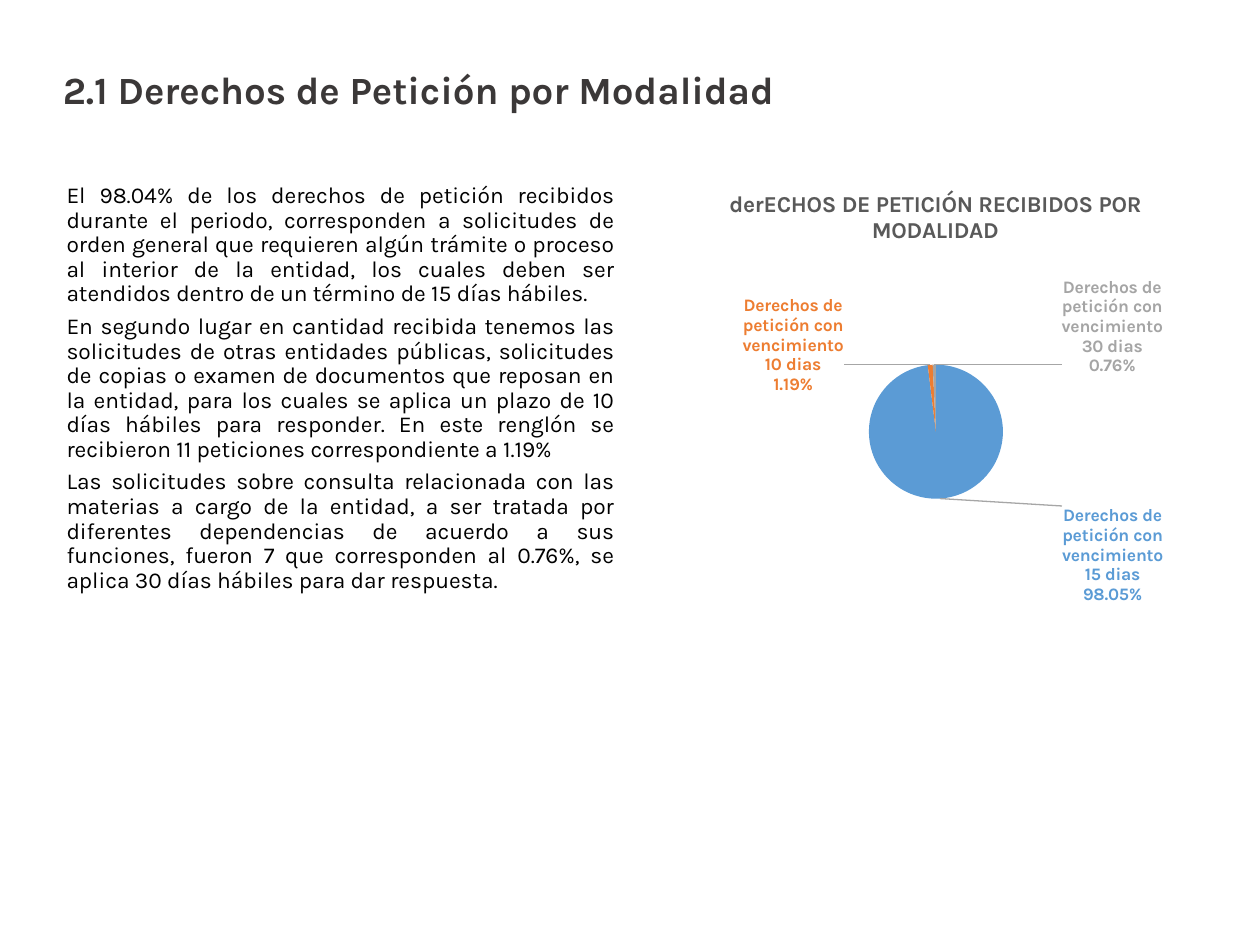
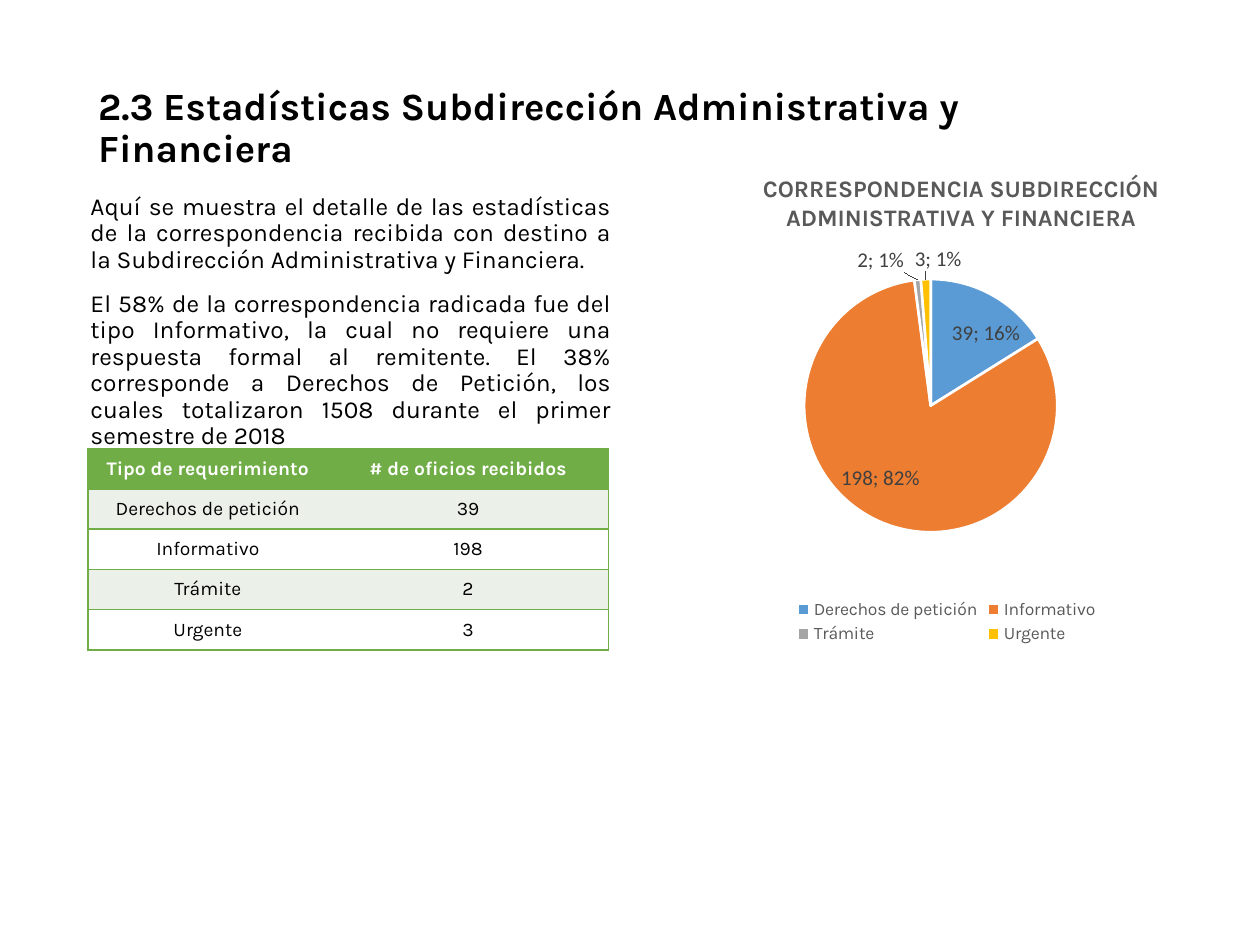
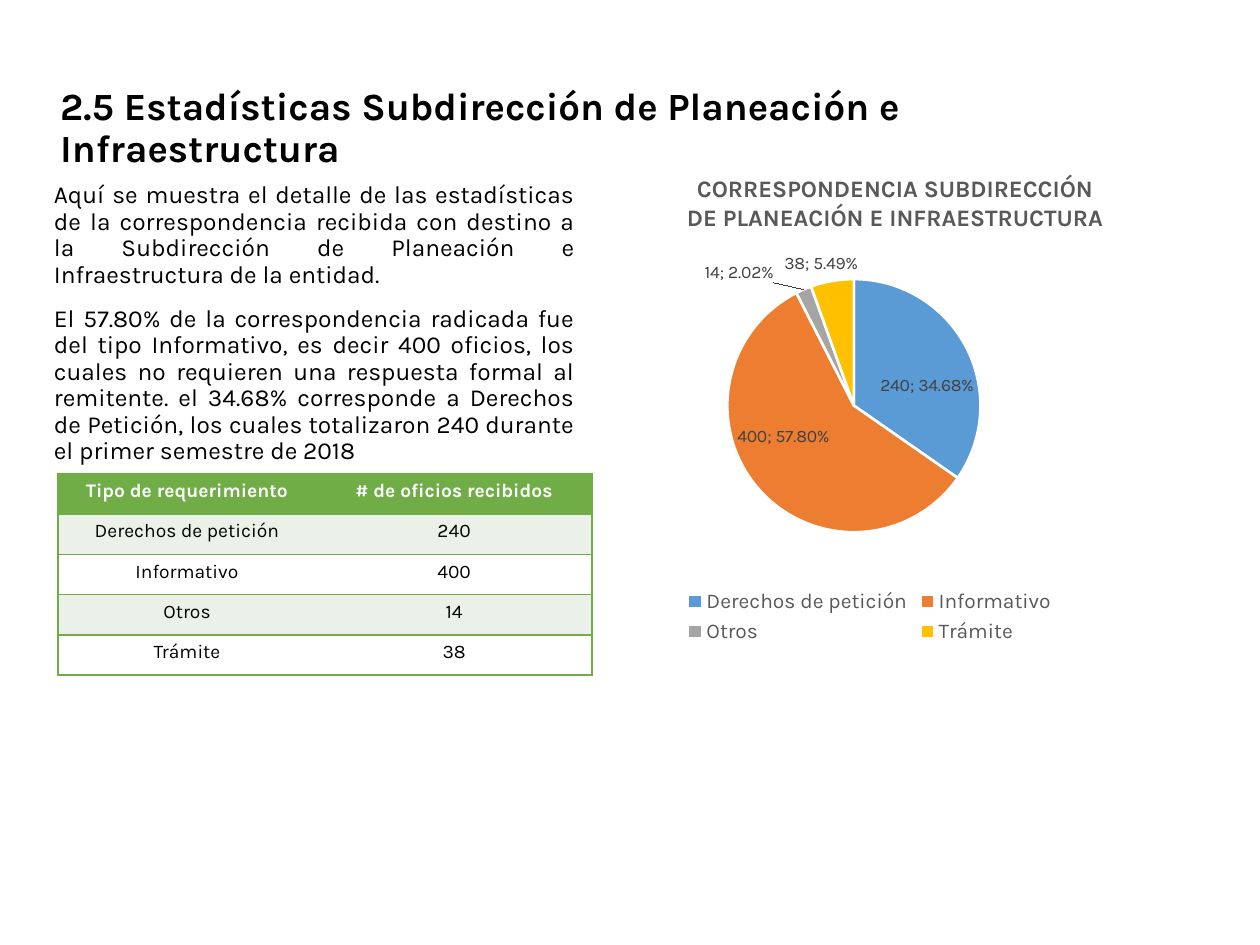
from lxml import etree
from pptx import Presentation
from pptx.chart.data import CategoryChartData
from pptx.dml.color import RGBColor
from pptx.enum.chart import XL_CHART_TYPE, XL_LABEL_POSITION, XL_LEGEND_POSITION
from pptx.enum.text import MSO_ANCHOR, PP_ALIGN
from pptx.oxml import parse_xml
from pptx.oxml.ns import nsdecls, qn
from pptx.util import Inches, Pt

PIE = XL_CHART_TYPE.PIE
OUTSIDE = XL_LABEL_POSITION.OUTSIDE_END
BOTTOM = XL_LEGEND_POSITION.BOTTOM
TOP, MIDDLE = MSO_ANCHOR.TOP, MSO_ANCHOR.MIDDLE
CENTER, JUSTIFY = PP_ALIGN.CENTER, PP_ALIGN.JUSTIFY

BLACK = RGBColor(0x00, 0x00, 0x00)
WHITE = RGBColor(0xFF, 0xFF, 0xFF)
CHARCOAL = RGBColor(0x3B, 0x38, 0x38)
DARK_GRAY = RGBColor(0x40, 0x40, 0x40)
MID_GRAY = RGBColor(0x59, 0x59, 0x59)
GREEN = RGBColor(0x70, 0xAD, 0x47)
PALE_GREEN = RGBColor(0xEB, 0xF1, 0xE9)
SLICES = [RGBColor(0x5B, 0x9B, 0xD5), RGBColor(0xED, 0x7D, 0x31),
          RGBColor(0xA5, 0xA5, 0xA5), RGBColor(0xFF, 0xC0, 0x00)]
FONT, ALT_FONT = "Karla", "Calibri"

TABLE_HEADER = ("Tipo de requerimiento", "# de oficios recibidos")
ROW_HEIGHT = 0.32
TITLE_POS = (0.15, 0.05)
WIDE_PLOT = (0.07, 0.27, 0.8, 0.5)

SLIDES = [
    dict(
        title="2.1 Derechos de Petición por Modalidad",
        title_box=(0.4, 0.35, 8.74, 0.76), title_color=CHARCOAL,
        body=[
            "El 98.04% de los derechos de petición recibidos durante el periodo, corresponden a "
            "solicitudes de orden general que requieren algún trámite o proceso al interior de la "
            "entidad, los cuales deben ser atendidos dentro de un término de 15 días hábiles.",
            "En segundo lugar en cantidad recibida tenemos las solicitudes de otras entidades "
            "públicas, solicitudes de copias o examen de documentos que reposan en la entidad, para "
            "los cuales se aplica un plazo de 10 días hábiles para responder. En este renglón se "
            "recibieron 11 peticiones correspondiente a 1.19%",
            "Las solicitudes sobre consulta relacionada con las materias a cargo de la entidad, a ser "
            "tratada por diferentes dependencias de acuerdo a sus funciones, fueron 7 que "
            "corresponden al 0.76%, se aplica 30 días hábiles para dar respuesta.",
        ],
        body_box=(0.43, 1.41, 4.54, 3.47), body_size=13, gap=4.5,
        chart_title="derECHOS DE PETICIÓN RECIBIDOS POR MODALIDAD", chart_title_size=13,
        chart_box=(5.05, 1.28, 4.71, 3.67), plot=(0.39, 0.44, 0.23, 0.29),
        data=[("Derechos de petición con vencimiento 15 dias", 98.05),
              ("Derechos de petición con vencimiento 10 dias", 1.19),
              ("Derechos de petición con vencimiento 30 dias", 0.76)],
        percent="0.00%", label_size=10, label_font=FONT,
        label_shifts=[(0.29, 0), (-0.23, 0.08), (0.3, 0.04)],
    ),
    dict(
        title="2.3 Estadísticas Subdirección Administrativa y Financiera",
        title_box=(0.68, 0.67, 8.62, 0.71), title_color=BLACK,
        body=[
            "Aquí se muestra el detalle de las estadísticas de la correspondencia recibida con "
            "destino a la Subdirección Administrativa y Financiera.",
            "El 58% de la correspondencia radicada fue del tipo Informativo, la cual no requiere una "
            "respuesta formal al remitente. El 38% corresponde a Derechos de Petición, los cuales "
            "totalizaron 1508 durante el primer semestre de 2018",
        ],
        body_box=(0.62, 1.49, 4.33, 4.1), body_size=14, gap=10,
        chart_title="CORRESPONDENCIA SUBDIRECCIÓN ADMINISTRATIVA Y FINANCIERA",
        chart_title_size=13.5,
        chart_box=(5.38, 1.13, 4.27, 4.02), plot=WIDE_PLOT,
        data=[("Derechos de petición", 39), ("Informativo", 198), ("Trámite", 2), ("Urgente", 3)],
        percent="0%", label_size=12, label_font=ALT_FONT, legend_size=10,
        table_pos=(0.7, 3.56), columns=(1.9, 2.23), anchor=MIDDLE,
    ),
    dict(
        title="2.5 Estadísticas Subdirección de Planeación e Infraestructura",
        title_box=(0.38, 0.67, 8.93, 0.71), title_color=BLACK,
        body=[
            "Aquí se muestra el detalle de las estadísticas de la correspondencia recibida con "
            "destino a la Subdirección de Planeación e Infraestructura de la entidad.",
            "El 57.80% de la correspondencia radicada fue del tipo Informativo, es decir 400 oficios, "
            "los cuales no requieren una respuesta formal al remitente. el 34.68% corresponde a "
            "Derechos de Petición, los cuales totalizaron 240 durante el primer semestre de 2018",
        ],
        body_box=(0.33, 1.4, 4.33, 4.32), body_size=14, gap=10,
        chart_title="CORRESPONDENCIA SUBDIRECCIÓN DE PLANEACIÓN E INFRAESTRUCTURA",
        chart_title_size=13.5,
        chart_box=(4.78, 1.13, 4.25, 4.02), plot=WIDE_PLOT,
        data=[("Derechos de petición", 240), ("Informativo", 400), ("Otros", 14), ("Trámite", 38)],
        percent="0.00%", label_size=10, label_font=FONT, legend_size=12,
        table_pos=(0.46, 3.76), columns=(2.05, 2.19), anchor=TOP,
    ),
]


def set_font(font, size, color, bold=False, name=FONT):
    font.name, font.size, font.bold = name, Pt(size), bold
    font.color.rgb = color


def add_text(slide, box, paragraphs, size, color, bold=False, gap=0, align=None, anchor=TOP):
    tf = slide.shapes.add_textbox(*map(Inches, box)).text_frame
    tf.word_wrap = True
    tf.vertical_anchor = anchor
    for i, text in enumerate(paragraphs):
        p = tf.paragraphs[0] if i == 0 else tf.add_paragraph()
        p.text = text
        p.line_spacing = 0.9
        p.alignment = align
        if i:
            p.space_before = Pt(gap)
        set_font(p.font, size, color, bold)


def manual_layout(x, y, w=None, h=None):
    """Return a c:layout; with w and h it places the inner plot area."""
    parts = []
    if w:
        parts.append('<c:layoutTarget val="inner"/>')
        parts.append('<c:xMode val="edge"/><c:yMode val="edge"/>')
    parts.append(f'<c:x val="{x}"/><c:y val="{y}"/>')
    if w:
        parts.append(f'<c:w val="{w}"/><c:h val="{h}"/>')
    return parse_xml(f'<c:layout {nsdecls("c")}><c:manualLayout>{"".join(parts)}'
                     "</c:manualLayout></c:layout>")


def place_title(title):
    layout = manual_layout(*TITLE_POS)
    for tag in ("c:yMode", "c:xMode"):
        mode = etree.Element(qn(tag), val="edge")
        layout[0].insert(0, mode)
    el = title._element
    for old in el.findall(qn("c:layout")):
        el.remove(old)
    el.find(qn("c:tx")).addnext(layout)


def add_separator(labels, text):
    sep = etree.Element(qn("c:separator"))
    sep.text = text
    labels.find(qn("c:showBubbleSize")).addnext(sep)


def spread_labels(series, spec_slide):
    """Move each label off its slice, in the colour of the slice."""
    for i, color in enumerate(SLICES[:len(spec_slide["data"])]):
        label = series.points[i].data_label
        set_font(label.font, spec_slide["label_size"], color, True)
        label.position = OUTSIDE
    dlbls = series.data_labels._element
    for dlbl, shift in zip(dlbls.findall(qn("c:dLbl")), spec_slide["label_shifts"]):
        for tag, val in (("showVal", "0"), ("showCatName", "1"), ("showPercent", "1")):
            dlbl.find(qn("c:" + tag)).set("val", val)
        fmt = etree.Element(qn("c:numFmt"), formatCode=spec_slide["percent"], sourceLinked="0")
        idx = dlbl.find(qn("c:idx"))
        idx.addnext(fmt)
        idx.addnext(manual_layout(*shift))
        add_separator(dlbl, "\n")
    dlbls.find(qn("c:showLeaderLines")).addnext(parse_xml(
        f'<c:leaderLines {nsdecls("c", "a")}><c:spPr><a:ln w="9525"><a:solidFill>'
        '<a:srgbClr val="A6A6A6"/></a:solidFill></a:ln></c:spPr></c:leaderLines>'))


def add_pie(slide, s):
    spread = "label_shifts" in s
    data = CategoryChartData()
    data.categories = [name for name, _ in s["data"]]
    data.add_series("Series 1", [value for _, value in s["data"]])
    chart = slide.shapes.add_chart(PIE, *map(Inches, s["chart_box"]), data).chart
    set_font(chart.font, 10, BLACK, name=ALT_FONT)

    chart.has_title = True
    p = chart.chart_title.text_frame.paragraphs[0]
    p.text = s["chart_title"]
    set_font(p.font, s["chart_title_size"], MID_GRAY, True)
    place_title(chart.chart_title)

    chart.has_legend = "legend_size" in s
    if chart.has_legend:
        chart.legend.position = BOTTOM
        chart.legend.include_in_layout = False
        set_font(chart.legend.font, s["legend_size"], MID_GRAY)

    area = chart.element.find(".//" + qn("c:plotArea"))
    for old in area.findall(qn("c:layout")):
        area.remove(old)
    area.insert(0, manual_layout(*s["plot"]))

    plot = chart.plots[0]
    plot.vary_by_categories = True
    series = plot.series[0]
    for i, color in enumerate(SLICES[:len(s["data"])]):
        fmt = series.points[i].format
        fmt.fill.solid()
        fmt.fill.fore_color.rgb = color
        if spread:
            fmt.line.fill.background()
        else:
            fmt.line.color.rgb = WHITE
            fmt.line.width = Pt(1.5)

    labels = series.data_labels
    labels.show_percentage = True
    labels.show_value = not spread
    labels.show_category_name = spread
    labels.number_format = s["percent"]
    labels.number_format_is_linked = False
    set_font(labels.font, s["label_size"], DARK_GRAY, name=s["label_font"])
    add_separator(labels._element, "\n" if spread else "; ")
    if spread:
        spread_labels(series, s)


def set_borders(cell, sides):
    """Draw green lines on the named sides and none on the others."""
    tc_pr = cell._tc.get_or_add_tcPr()
    for i, side in enumerate("LRTB"):
        fill = (f'<a:solidFill><a:srgbClr val="{GREEN}"/></a:solidFill>'
                if side in sides else "<a:noFill/>")
        tc_pr.insert(i, parse_xml(f'<a:ln{side} {nsdecls("a")} w="12700">{fill}</a:ln{side}>'))


def add_counts(slide, s):
    rows = [TABLE_HEADER] + s["data"]
    left, top = s["table_pos"]
    table = slide.shapes.add_table(
        len(rows), 2, Inches(left), Inches(top),
        Inches(sum(s["columns"])), Inches(ROW_HEIGHT * len(rows))).table
    table.first_row = table.horz_banding = False
    for col, width in zip(table.columns, s["columns"]):
        col.width = Inches(width)
    for r, row in enumerate(rows):
        for c, value in enumerate(row):
            cell = table.cell(r, c)
            cell.vertical_anchor = s["anchor"]
            cell.fill.solid()
            cell.fill.fore_color.rgb = GREEN if r == 0 else PALE_GREEN if r % 2 else WHITE
            p = cell.text_frame.paragraphs[0]
            p.text = str(value)
            p.alignment = CENTER
            set_font(p.font, 11, BLACK if r else WHITE, r == 0)
            set_borders(cell, "TB" + "LR"[c])


def main():
    prs = Presentation()
    prs.slide_width, prs.slide_height = Inches(10), Inches(7.5)
    for s in SLIDES:
        slide = prs.slides.add_slide(prs.slide_layouts[6])
        add_text(slide, s["title_box"], [s["title"]], 22, s["title_color"], True, anchor=MIDDLE)
        add_text(slide, s["body_box"], s["body"], s["body_size"], BLACK,
                 gap=s["gap"], align=JUSTIFY)
        add_pie(slide, s)
        if "table_pos" in s:
            add_counts(slide, s)
    prs.save("out.pptx")


if __name__ == "__main__":
    main()
